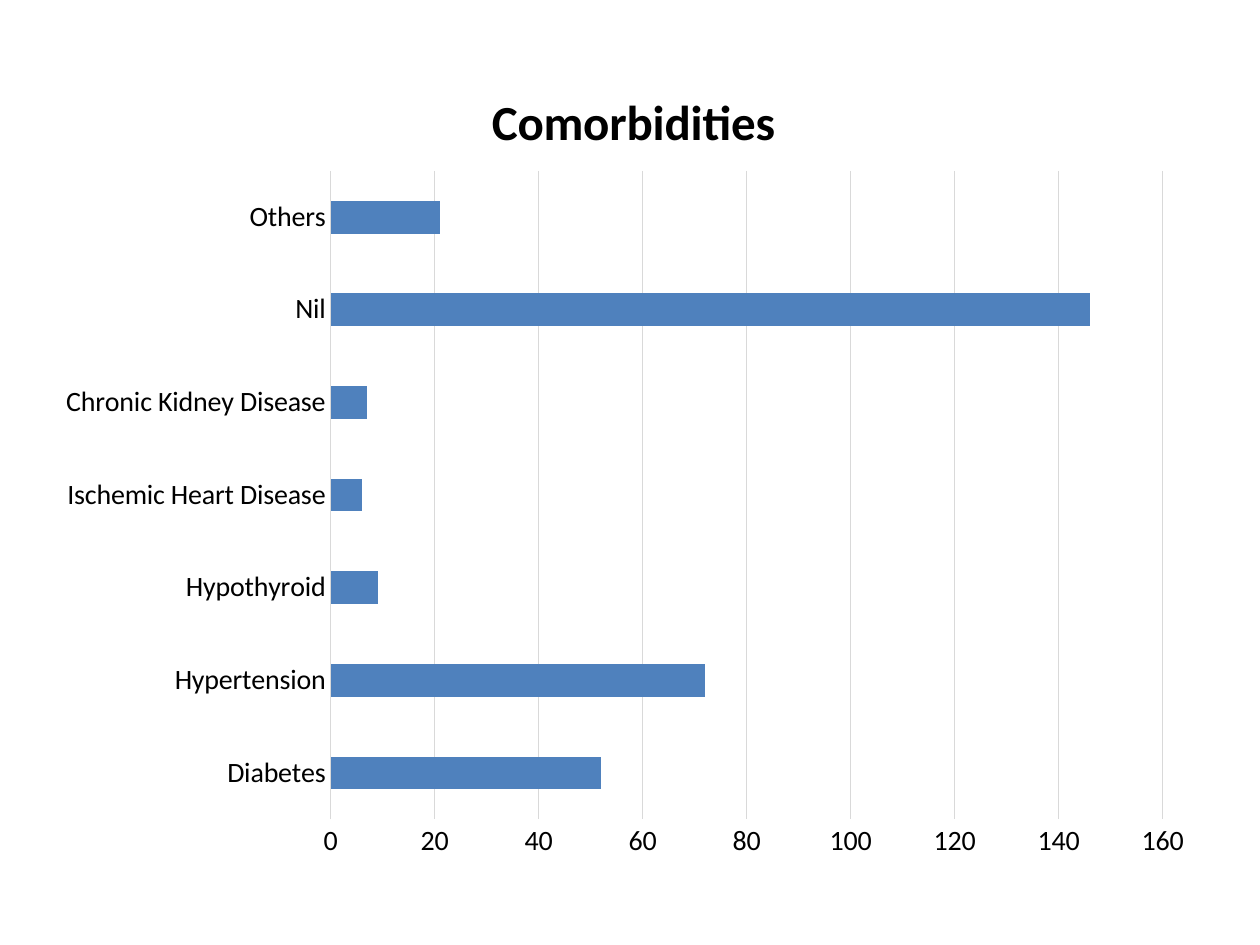
from pptx import Presentation
from pptx import util as u
from pptx.chart import data as cd
from pptx.dml.color import RGBColor
from pptx.enum import chart as ch
from pptx.oxml import parse_xml
from pptx.oxml.ns import nsdecls, qn


def tint(code):
    return RGBColor.from_string(code)


def style(item, form):
    for key, val in form.items():
        setattr(item, key, val)


def place(node, index, **spots):
    for old in node.findall(qn("c:layout")):
        node.remove(old)
    modes = "".join(f'<c:{key}Mode val="edge"/>' for key in "xy")
    sizes = "".join(f'<c:{key} val="{val}"/>' for key, val in spots.items())
    inner = '<c:layoutTarget val="inner"/>' if "w" in spots else ""
    node.insert(index, parse_xml(
        f'<c:layout {nsdecls("c")}><c:manualLayout>{inner}{modes}{sizes}'
        "</c:manualLayout></c:layout>"))


class Deck:
    face = "Calibri"
    ink, grid, fill = "000000", "D9D9D9", "4F81BD"

    def __init__(self, wide, high):
        self.show = Presentation()
        style(self.show, {"slide_width": u.Inches(wide),
                          "slide_height": u.Inches(high)})
        self.page = self.show.slides.add_slide(self.show.slide_layouts[6])

    def font(self, font, size, bold=False):
        style(font, {"name": self.face, "size": u.Pt(size), "bold": bold})
        font.color.rgb = tint(self.ink)

    def line(self, line):
        line.color.rgb = tint(self.grid)
        line.width = u.Pt(0.75)

    def bars(self, left, top, width, height, name, rows):
        data = cd.CategoryChartData()
        data.categories = list(rows)
        data.add_series(name, list(rows.values()))
        wide, high = self.show.slide_width, self.show.slide_height
        box = [int(share * size) for share, size in
               zip((left, top, width, height), (wide, high, wide, high))]
        chart = self.page.shapes.add_chart(
            ch.XL_CHART_TYPE.BAR_CLUSTERED, *box, data).chart
        chart.has_legend = False
        self.font(chart.font, 16)
        plot = chart.plots[0]
        style(plot, {"gap_width": 182, "vary_by_categories": False})
        paint = plot.series[0].format.fill
        paint.solid()
        paint.fore_color.rgb = tint(self.fill)
        self.axes(chart)
        place(chart.plots[0]._element.getparent(), 0,
              x=0.25, y=0.16, w=0.71, h=0.78)
        return chart

    def axes(self, chart):
        none = ch.XL_TICK_MARK.NONE
        for axis in (chart.category_axis, chart.value_axis):
            style(axis, {"major_tick_mark": none, "minor_tick_mark": none})
            self.font(axis.tick_labels.font, 16)
        chart.category_axis.has_major_gridlines = False
        self.line(chart.category_axis.format.line)
        value = chart.value_axis
        style(value, {"minimum_scale": 0, "maximum_scale": 160,
                      "major_unit": 20, "has_major_gridlines": True})
        value.format.line.fill.background()
        self.line(value.major_gridlines.format.line)

    def title(self, chart, words):
        chart.has_title = True
        title = chart.chart_title
        title.include_in_layout = False
        para = title.text_frame.paragraphs[0]
        run = para.add_run()
        run.text = words
        self.font(run.font, 28, True)
        place(title._element, 1, x=0.38, y=0.05)


def main():
    deck = Deck(10, 7.5)
    chart = deck.bars(0.03, 0.04, 0.93, 0.88, "Series 1", {
        "Diabetes": 52,
        "Hypertension": 72,
        "Hypothyroid": 9,
        "Ischemic Heart Disease": 6,
        "Chronic Kidney Disease": 7,
        "Nil": 146,
        "Others": 21,
    })
    deck.title(chart, "Comorbidities")
    deck.show.save("out.pptx")


if __name__ == "__main__":
    main()
